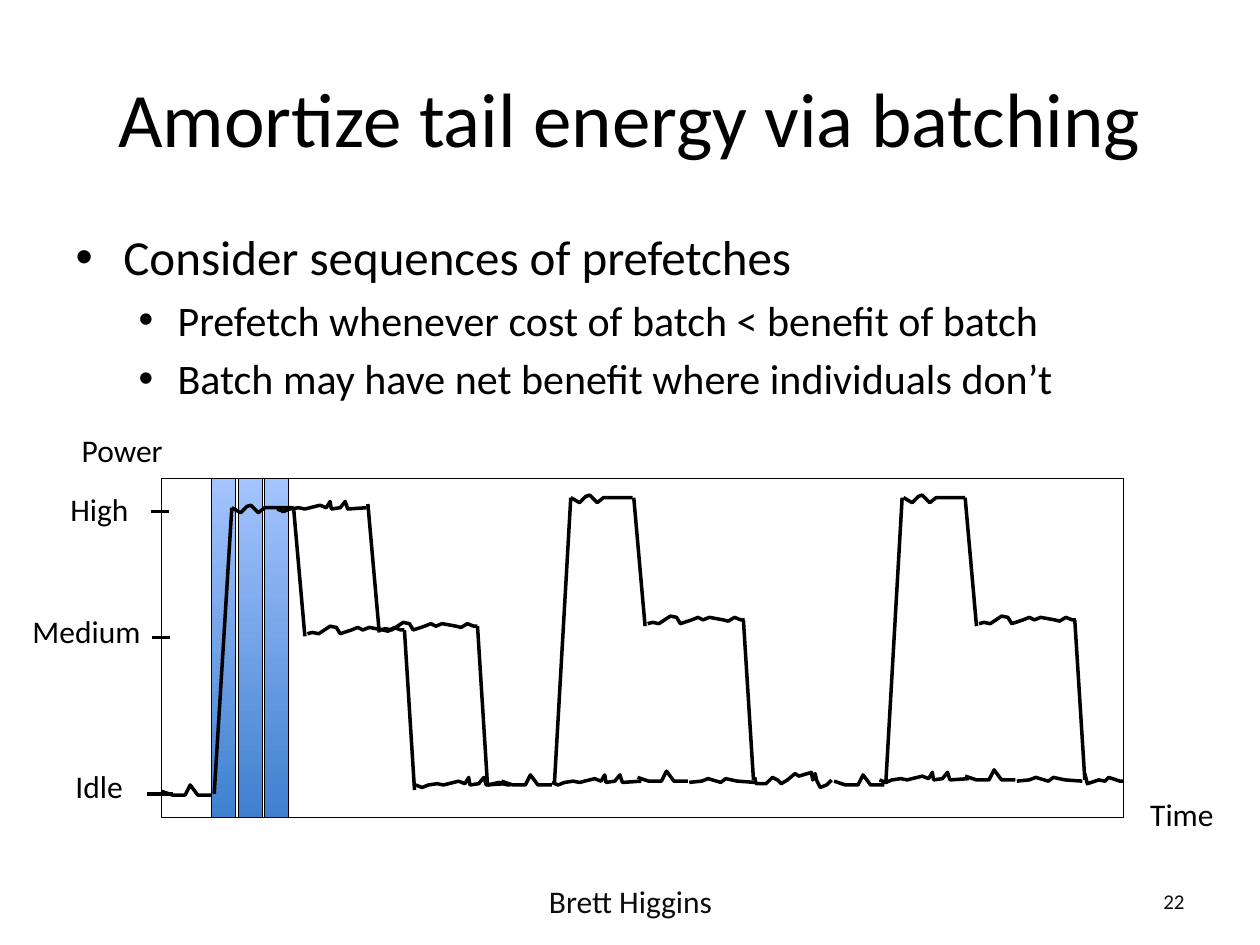
import pptx
import pptx.dml.color
import pptx.enum.shapes
import pptx.enum.text
import pptx.oxml
import pptx.oxml.ns
import pptx.util
from pptx.util import Inches

HUES = {"ink": "000000", "soft": "0D0D0D", "deep": "3F80CE", "pale": "A4C4FF"}
COLOR = {k: pptx.dml.color.RGBColor.from_string(v) for k, v in HUES.items()}
ALIGN = pptx.enum.text.PP_ALIGN
MIDDLE = pptx.enum.text.MSO_ANCHOR.MIDDLE
RECT = pptx.enum.shapes.MSO_SHAPE.RECTANGLE
STRAIGHT = pptx.enum.shapes.MSO_CONNECTOR.STRAIGHT


def write(para, text, size, hue="ink"):
    run = para.add_run()
    run.text = text
    run.font.name = "Calibri"
    run.font.size = pptx.util.Pt(size)
    run.font.color.rgb = COLOR[hue]


def stroke(shape, width):
    shape.line.color.rgb = COLOR["ink"]
    shape.line.width = pptx.util.Pt(width)


deck = pptx.Presentation()
deck.slide_width, deck.slide_height = Inches(10), Inches(7.5)
slide = deck.slides.add_slide(deck.slide_layouts[1])
shapes = slide.shapes

# Title and list
title, body = slide.placeholders
title.left, title.top = Inches(0.5), Inches(0.3)
title.width, title.height = Inches(9), Inches(1.25)
title.text_frame.vertical_anchor = MIDDLE
para = title.text_frame.paragraphs[0]
para.alignment = ALIGN.CENTER
write(para, "Amortize tail energy via batching", 44)

body.left, body.top = Inches(0.5), Inches(1.75)
body.width, body.height = Inches(9), Inches(1.54)
items = [
    (0, "Consider sequences of prefetches", 28, 0.38, -0.38),
    (1, "Prefetch whenever cost of batch < benefit of batch", 24, 0.81, -0.31),
    (1, "Batch may have net benefit where individuals don’t", 24, 0.81, -0.31),
]
frame = body.text_frame
for i, (level, text, size, left, hang) in enumerate(items):
    para = frame.add_paragraph() if i else frame.paragraphs[0]
    para.level = level
    para.space_before = pptx.util.Pt(size * 0.2 if i else 0)
    props = para._p.get_or_add_pPr()
    props.set("marL", str(Inches(left)))
    props.set("indent", str(Inches(hang)))
    font = pptx.oxml.parse_xml(
        f'<a:buFont {pptx.oxml.ns.nsdecls("a")} typeface="Arial"/>')
    mark = pptx.oxml.parse_xml(
        f'<a:buChar {pptx.oxml.ns.nsdecls("a")} char="•"/>')
    props.extend([font, mark])
    write(para, text, size)

# Prefetch bars and plot frame
for left in (1.68, 1.89, 2.1):
    bar = shapes.add_shape(
        RECT, Inches(left), Inches(3.8), Inches(0.19), Inches(2.69))
    bar.shadow.inherit = False
    bar.fill.gradient()
    bar.fill.gradient_angle = 90
    for stop, hue in zip(bar.fill.gradient_stops, ("deep", "pale")):
        stop.color.rgb = COLOR[hue]
    stroke(bar, 0.5)

plot = shapes.add_shape(
    RECT, Inches(1.28), Inches(3.8), Inches(7.64), Inches(2.69))
plot.shadow.inherit = False
plot.fill.background()
stroke(plot, 0.75)

# Power trace: each wave is a list of steps from its start, in 0.01 inch
waves = {
    "blip": [(9, 3), (19, 3), (23, -5), (29, 3), (40, 3)],
    "peak": [(7, 4), (12, -1), (15, -2), (21, 4), (26, 0), (29, 0), (49, 0)],
    "tail": [(4, -1), (9, 0), (18, -6), (23, -5), (26, 0), (35, -3), (40, -5),
             (44, -3), (49, -5), (60, -3), (64, -2), (69, -5), (74, -3),
             (77, -3)],
    "spikes": [(5, 2), (10, 0), (17, -1), (22, 0), (26, -1), (34, -3),
               (39, -1), (42, -6), (43, 0), (50, -1), (54, -6), (56, 0),
               (71, -1)],
    "ripple": [(10, -1), (15, -3), (25, 0), (29, -3), (38, -1), (52, 0)],
    "wobble": [(1, 5), (9, 5), (14, 0), (18, 2), (21, 5), (26, 2), (32, -3),
               (35, -1), (45, -4), (46, 2), (48, -3), (49, 2), (52, 8),
               (57, 6), (61, 2)],
    "end": [(2, 8), (11, 5), (16, 6), (19, 3), (28, 6), (31, 6)],
    "dip": [(9, -2), (16, 0), (18, 0)],
}
starts = {
    "blip": [(128, 628), (398, 620), (662, 620), (506, 617), (766, 616)],
    "peak": [(184, 403), (453, 395), (717, 395)],
    "tail": [(244, 503), (514, 495), (777, 495), (302, 500)],
    "spikes": [(330, 623), (438, 621), (698, 619), (220, 404)],
    "ripple": [(547, 621), (807, 620)],
    "wobble": [(599, 617)],
    "end": [(861, 614)],
    "dip": [(387, 623)],
}
for name, spots in starts.items():
    for x, y in spots:
        pen = shapes.build_freeform(x, y, scale=Inches(0.01))
        pen.add_line_segments(
            [(x + dx, y + dy) for dx, dy in waves[name]], close=False)
        wave = pen.convert_to_shape()
        wave.shadow.inherit = False
        wave.fill.background()
        stroke(wave, 2)

# Jumps between power levels, then axis ticks
lines = [
    (1.7, 6.3, 1.84, 4.03), (2.33, 4.03, 2.42, 5.05), (3.21, 5, 3.29, 6.27),
    (2.92, 4, 3.01, 5.02), (3.79, 4.97, 3.87, 6.24),
    (1.2, 4.06, 1.34, 4.06), (1.21, 5.06, 1.35, 5.06), (1.37, 6.3, 1.17, 6.3),
]
for x in (4.4, 7.03):
    lines += [(x, 6.22, x + 0.13, 3.95), (x + 0.63, 3.95, x + 0.72, 4.97),
              (x + 1.5, 4.92, x + 1.58, 6.19)]
for ends in lines:
    line = shapes.add_connector(STRAIGHT, *[Inches(v) for v in ends])
    stroke(line, 2)
    line._element.spPr.append(pptx.oxml.parse_xml(
        f'<a:effectLst {pptx.oxml.ns.nsdecls("a")}/>'))

# Axis labels and footer
labels = [
    ("Power", 0.55, 3.37, 0.85), ("High", 0.46, 3.84, 0.67),
    ("Medium", 0.16, 4.81, 1.07), ("Idle", 0.5, 6.04, 0.58),
    ("Time", 9.03, 6.26, 0.71),
]
for text, left, top, width in labels:
    box = shapes.add_textbox(
        Inches(left), Inches(top), Inches(width), Inches(0.4))
    box.text_frame.word_wrap = False
    write(box.text_frame.paragraphs[0], text, 18)

for text, left, width, size, align in (
        ("Brett Higgins", 3.42, 3.17, 18, ALIGN.CENTER),
        ("22", 7.17, 2.33, 12, ALIGN.RIGHT)):
    box = shapes.add_textbox(
        Inches(left), Inches(6.95), Inches(width), Inches(0.4))
    box.text_frame.word_wrap = True
    box.text_frame.vertical_anchor = MIDDLE
    box.text_frame.paragraphs[0].alignment = align
    write(box.text_frame.paragraphs[0], text, size, "soft")

deck.save("out.pptx")
